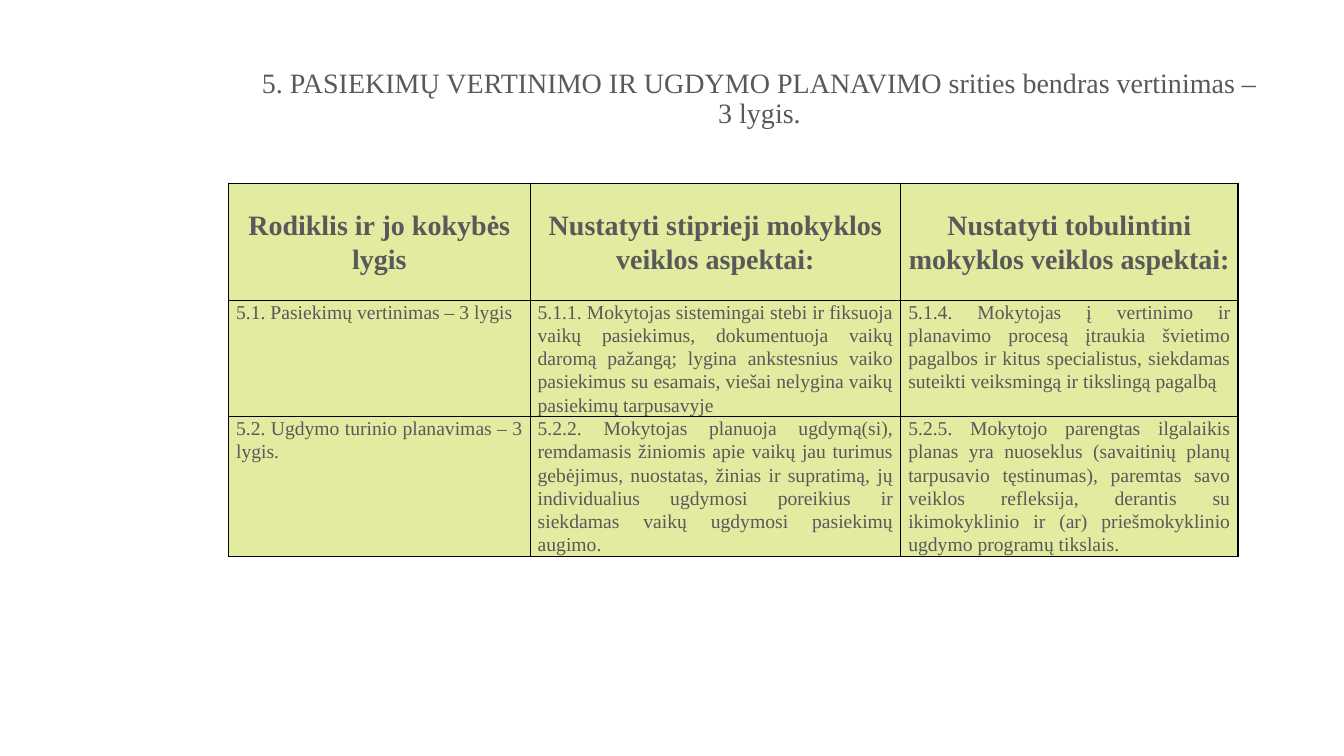
from dataclasses import dataclass

from lxml.etree import SubElement
from pptx import Presentation
from pptx.dml.color import RGBColor
from pptx.enum.text import MSO_ANCHOR as Anchor, MSO_AUTO_SIZE as AutoSize, PP_ALIGN as Align
from pptx.oxml.ns import qn
from pptx.util import Cm, Pt


@dataclass(frozen=True)
class Theme:
    font: str = "Times New Roman"
    text: str = "595959"
    cell: str = "E2EBA0"
    border: str = "000000"
    heading_size: int = 20
    body_size: int = 14
    border_width: int = 1


class SlideBuilder:
    def __init__(self, slide, theme):
        self.slide = slide
        self.theme = theme

    def style(self, para, size, align, spacing, bold=False):
        para.alignment = align
        para.line_spacing = spacing
        para.font.name = self.theme.font
        para.font.size = Pt(size)
        para.font.bold = bold
        para.font.color.rgb = RGBColor.from_string(self.theme.text)

    def title(self, text, left, top, width, height):
        box = self.slide.shapes.title
        box.left, box.top, box.width, box.height = Cm(left), Cm(top), Cm(width), Cm(height)
        frame = box.text_frame
        frame.text = text
        frame.word_wrap = True
        frame.auto_size = AutoSize.NONE
        frame.vertical_anchor = Anchor.BOTTOM
        frame.margin_bottom = Cm(0.9)
        self.style(frame.paragraphs[0], self.theme.heading_size, Align.CENTER, 0.9)

    def borders(self, cell):
        properties = cell._tc.get_or_add_tcPr()
        for position, side in enumerate(("lnL", "lnR", "lnT", "lnB")):
            line = properties.makeelement(qn(f"a:{side}"), {"w": str(Pt(self.theme.border_width))})
            fill = SubElement(line, qn("a:solidFill"))
            SubElement(fill, qn("a:srgbClr"), val=self.theme.border)
            properties.insert(position, line)

    def cell(self, cell, text, heading):
        cell.text = text
        cell.margin_left = cell.margin_right = Cm(0.19)
        cell.margin_top = cell.margin_bottom = 0
        cell.vertical_anchor = Anchor.MIDDLE if heading else Anchor.TOP
        cell.fill.solid()
        cell.fill.fore_color.rgb = RGBColor.from_string(self.theme.cell)
        self.borders(cell)
        size = self.theme.heading_size if heading else self.theme.body_size
        align = Align.CENTER if heading else Align.JUSTIFY
        self.style(cell.text_frame.paragraphs[0], size, align, 1.07, heading)

    def table(self, rows, left, top, widths, heights):
        table = self.slide.shapes.add_table(
            len(rows), len(widths), Cm(left), Cm(top), Cm(sum(widths)), Cm(sum(heights))
        ).table
        table.horz_banding = False
        for column, width in zip(table.columns, widths):
            column.width = Cm(width)
        for index, (row, texts, height) in enumerate(zip(table.rows, rows, heights)):
            row.height = Cm(height)
            for cell, text in zip(row.cells, texts):
                self.cell(cell, text, heading=index == 0)


TITLE = "5. PASIEKIMŲ VERTINIMO IR UGDYMO PLANAVIMO srities bendras vertinimas – 3 lygis."
ASSESSMENT_ROWS = [
    (
        "Rodiklis ir jo kokybės lygis",
        "Nustatyti stiprieji mokyklos veiklos aspektai:",
        "Nustatyti tobulintini mokyklos veiklos aspektai:",
    ),
    (
        "5.1. Pasiekimų vertinimas – 3 lygis",
        "5.1.1. Mokytojas sistemingai stebi ir fiksuoja vaikų pasiekimus, dokumentuoja vaikų "
        "daromą pažangą; lygina ankstesnius vaiko pasiekimus su esamais, viešai nelygina vaikų "
        "pasiekimų tarpusavyje",
        "5.1.4. Mokytojas į vertinimo ir planavimo procesą įtraukia švietimo pagalbos ir kitus "
        "specialistus, siekdamas suteikti veiksmingą ir tikslingą pagalbą",
    ),
    (
        "5.2. Ugdymo turinio planavimas – 3 lygis.",
        "5.2.2. Mokytojas planuoja ugdymą(si), remdamasis žiniomis apie vaikų jau turimus "
        "gebėjimus, nuostatas, žinias ir supratimą, jų individualius ugdymosi poreikius ir "
        "siekdamas vaikų ugdymosi pasiekimų augimo.",
        "5.2.5. Mokytojo parengtas ilgalaikis planas yra nuoseklus (savaitinių planų tarpusavio "
        "tęstinumas), paremtas savo veiklos refleksija, derantis su ikimokyklinio ir (ar) "
        "priešmokyklinio ugdymo programų tikslais.",
    ),
]


def main():
    deck = Presentation()
    deck.slide_width, deck.slide_height = Cm(33.87), Cm(19.05)
    page = SlideBuilder(deck.slides.add_slide(deck.slide_layouts[5]), Theme())
    page.title(TITLE, 6.12, 0.84, 26.04, 3.33)
    page.table(ASSESSMENT_ROWS, 5.76, 4.62, (7.6, 9.34, 8.5), (2.95, 2.93, 3.52))
    deck.save("out.pptx")


if __name__ == "__main__":
    main()
